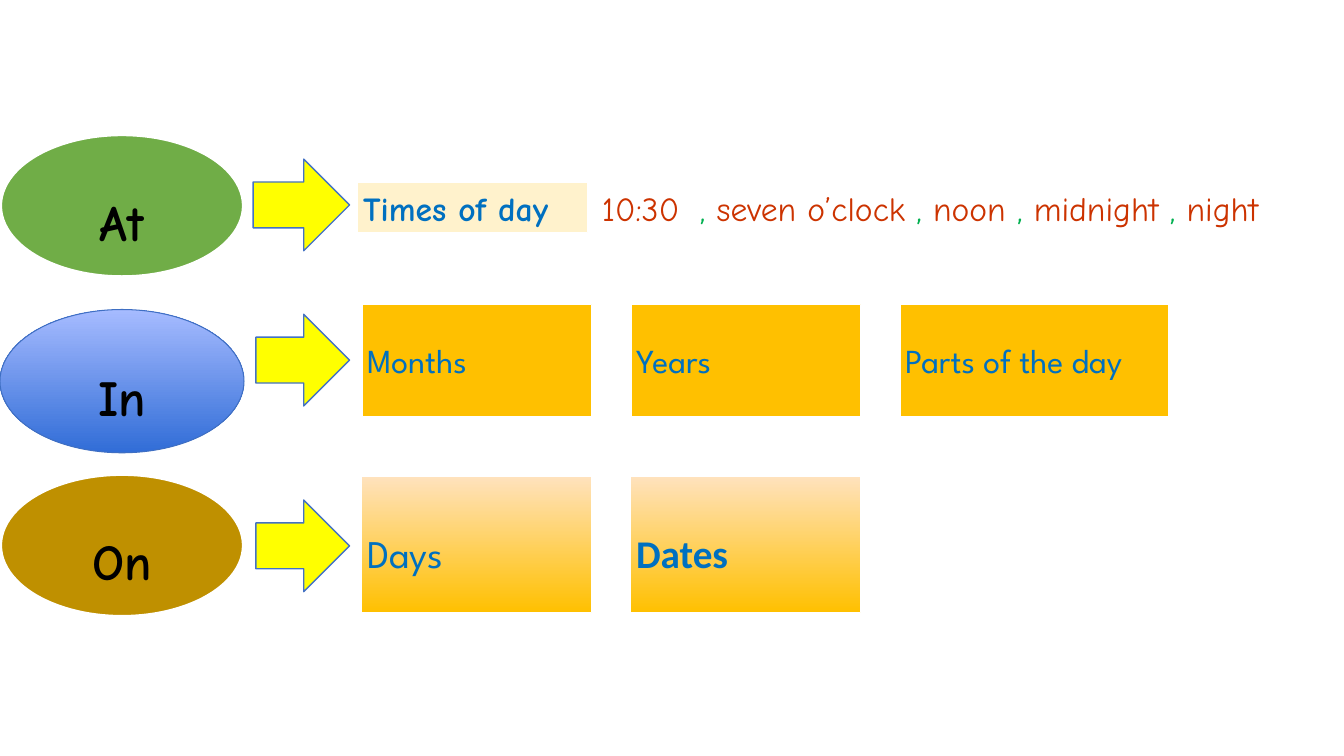
"""Build a slide on the time prepositions at, in and on."""
from typing import NamedTuple

from lxml import etree
from pptx import Presentation
from pptx import util as u
from pptx.dml.color import RGBColor
from pptx.enum import shapes, text
from pptx.oxml import ns

COMIC, SPARTAN, CALIBRI = "Comic Neue", "League Spartan", "Calibri"
BLUE, RED, GREEN, WHITE = "0070C0", "CC3300", "00B050", "FFFFFF"
AMBER = ("FFC000", "FFE2BD")
INSET = 0.13
ARROW_RIGHT = 8.81
BOX_LEFT, BOX_STEP, BOX_WIDTH = 9.12, 6.78, 5.79


class Label(NamedTuple):
    words: str
    size: float
    font: str
    color: str
    bold: bool = False
    drop: float = 0


class Preposition(NamedTuple):
    word: str
    top: float
    fill: tuple
    line: str
    line_width: float
    arrow_left: float
    arrow_top: float


class Use(NamedTuple):
    label: Label
    left: float
    top: float
    height: float
    fill: tuple
    line_width: float
    width: float = BOX_WIDTH


def rgb(color: str) -> RGBColor:
    """Turn a hex string into a colour."""
    return RGBColor.from_string(color)


def add_run(paragraph, label: Label) -> None:
    """Add one formatted run to a paragraph."""
    run = paragraph.add_run()
    run.text = label.words
    run.font.size = u.Pt(label.size)
    run.font.name = label.font
    run.font.bold = label.bold
    run.font.color.rgb = rgb(label.color)


def set_frame(frame, drop: float = 0) -> None:
    """Set insets and wrapping, with extra room above the text."""
    frame.word_wrap = True
    frame.margin_left = frame.margin_right = frame.margin_bottom = u.Cm(INSET)
    frame.margin_top = u.Cm(INSET + drop)


def draw(slide, kind, left: float, top: float, width: float, height: float,
         fill: tuple, line: str, line_width: float):
    """Draw a shape filled with one colour or a bottom-to-top gradient."""
    shape = slide.shapes.add_shape(kind, u.Cm(left), u.Cm(top), u.Cm(width), u.Cm(height))
    shape.shadow.inherit = False
    if len(fill) == 1:
        shape.fill.solid()
        shape.fill.fore_color.rgb = rgb(fill[0])
    else:
        shape.fill.gradient()
        shape.fill.gradient_angle = 90
        for stop, color in zip(shape.fill.gradient_stops, fill):
            stop.color.rgb = rgb(color)
    shape.line.color.rgb = rgb(line)
    shape.line.width = u.Pt(line_width)
    return shape


def write(shape, label: Label, align) -> None:
    """Write a label inside a shape."""
    frame = shape.text_frame
    set_frame(frame, label.drop)
    frame.vertical_anchor = text.MSO_ANCHOR.MIDDLE
    paragraph = frame.paragraphs[0]
    paragraph.alignment = align
    add_run(paragraph, label)


def add_preposition(slide, item: Preposition) -> None:
    """Draw a preposition in its ellipse, with the arrow to its uses."""
    ellipse = draw(slide, shapes.MSO_SHAPE.OVAL, 0, item.top, 6.15, 3.61,
                   item.fill, item.line, item.line_width)
    write(ellipse, Label(item.word, 36, COMIC, "000000", True, 0.77), text.PP_ALIGN.CENTER)
    draw(slide, shapes.MSO_SHAPE.RIGHT_ARROW, item.arrow_left, item.arrow_top,
         ARROW_RIGHT - item.arrow_left, 2.31, ("FFFF00",), "4472C4", 1)


def add_use(slide, use: Use) -> None:
    """Draw a box naming one use of a preposition."""
    box = draw(slide, shapes.MSO_SHAPE.FLOWCHART_PROCESS, use.left, use.top,
               use.width, use.height, use.fill, WHITE, use.line_width)
    write(box, use.label, text.PP_ALIGN.LEFT)


def add_times(slide) -> None:
    """List the example times with green commas between them."""
    times = slide.shapes.add_textbox(u.Cm(15.04), u.Cm(4.6), u.Cm(18.82), u.Cm(1.27))
    set_frame(times.text_frame)
    paragraph = times.text_frame.paragraphs[0]
    tabs = etree.SubElement(paragraph._p.get_or_add_pPr(), ns.qn("a:tabLst"))
    etree.SubElement(tabs, ns.qn("a:tab"), pos=str(u.Cm(2.47)), algn="l")
    examples = ["10:30\t", " seven o’clock ", " noon ", " midnight ", " night"]
    for number, example in enumerate(examples):
        if number:
            add_run(paragraph, Label(",", 24, COMIC, GREEN))
        add_run(paragraph, Label(example, 24, COMIC, RED))


def month_box(words: str, column: int, width: float = BOX_WIDTH) -> Use:
    """Describe a box in the row for in."""
    return Use(Label(words, 24, SPARTAN, BLUE), BOX_LEFT + column * BOX_STEP,
               7.67, 2.82, AMBER[:1], 1, width)


def day_box(words: str, column: int, font: str, bold: bool) -> Use:
    """Describe a box in the row for on."""
    return Use(Label(words, 28, font, BLUE, bold, 0.43), BOX_LEFT + column * BOX_STEP,
               12.01, 3.43, AMBER, 0.75)


PREPOSITIONS = [
    Preposition("At", 3.38, ("70AD47",), WHITE, 3, 6.38, 4.01),
    Preposition("In", 7.8, ("316DD7", "A6BBFF"), "3F6FC3", 0.75, 6.45, 7.92),
    Preposition("On", 11.94, ("BF9000",), WHITE, 3, 6.45, 12.6),
]
USES = [
    Use(Label("Times of day", 24, COMIC, BLUE, True), 9.02, 4.6, 1.27, ("FFF2CC",), 0.75),
    month_box("Months", 0),
    month_box("Years", 1),
    month_box("Parts of the day", 2, 6.78),
    day_box("Days", 0, SPARTAN, False),
    day_box("Dates", 1, CALIBRI, True),
]


def main() -> None:
    """Build and save the slide."""
    deck = Presentation()
    deck.slide_width, deck.slide_height = u.Cm(33.87), u.Cm(19.05)
    slide = deck.slides.add_slide(deck.slide_layouts[6])
    for preposition in PREPOSITIONS:
        add_preposition(slide, preposition)
    for use in USES:
        add_use(slide, use)
    add_times(slide)
    deck.save("out.pptx")


if __name__ == "__main__":
    main()
